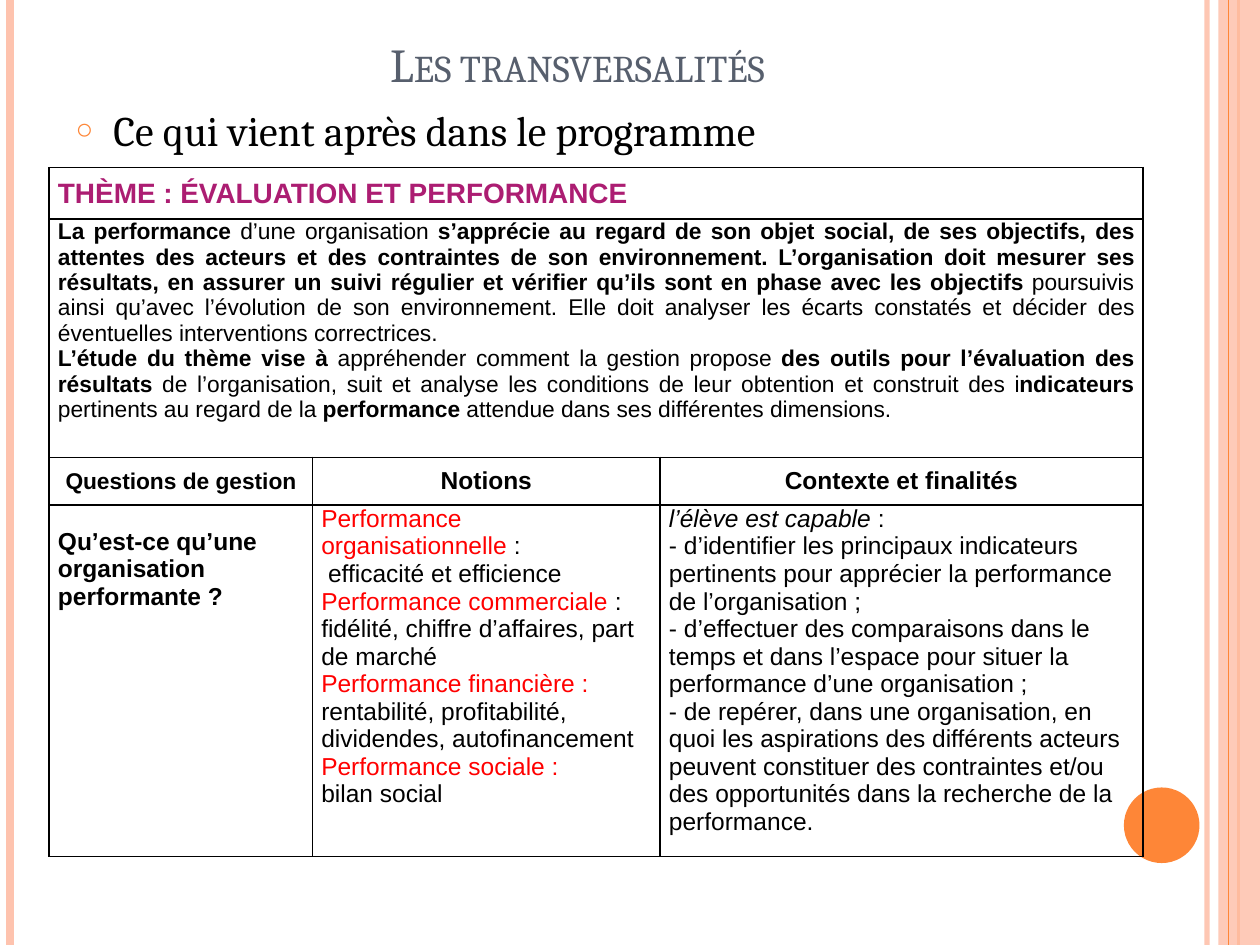
import pptx
import pptx.dml.color
import pptx.enum.shapes
import pptx.enum.text
import pptx.oxml.ns
import pptx.oxml.xmlchemy
import pptx.util
from lxml import etree

Inches = pptx.util.Inches
Pt = pptx.util.Pt
qn = pptx.oxml.ns.qn
ALIGN = pptx.enum.text.PP_ALIGN
ANCHOR = pptx.enum.text.MSO_ANCHOR
SHAPES = pptx.enum.shapes.MSO_SHAPE

COLORS = {
    "orange": "FE8637", "peach": "FEC3AE", "slate": "575F6D",
    "black": "000000", "red": "FF0000", "magenta": "AC1D72",
}

THEME = [[("THÈME : ÉVALUATION ET PERFORMANCE", "bold")]]
SUMMARY = [
    [("La performance", "bold"), (" d’une organisation ", ""),
     ("s’apprécie au regard de son objet social, de ses objectifs, des attentes des acteurs et des "
      "contraintes de son environnement. L’organisation doit mesurer ses résultats, en assurer un suivi "
      "régulier et vérifier qu’ils sont en phase avec les objectifs", "bold"),
     (" poursuivis ainsi qu’avec l’évolution de son environnement. Elle doit analyser les écarts constatés "
      "et décider des éventuelles interventions correctrices.", "")],
    [("L’étude du thème vise à", "bold"), (" appréhender comment la gestion propose ", ""),
     ("des outils pour l’évaluation des résultats", "bold"),
     (" de l’organisation, suit et analyse les conditions de leur obtention et construit des i", ""),
     ("ndicateurs", "bold"), (" pertinents au regard de la ", ""), ("performance", "bold"),
     (" attendue dans ses différentes dimensions. ", "")],
]
HEADINGS = [("Questions de gestion", 13), ("Notions", 14), ("Contexte et finalités", 14)]
QUESTION = [[("Qu’est-ce qu’une organisation performante ?", "bold")]]
NOTIONS = [
    [("Performance organisationnelle ", "red"), (":", "")],
    [(" efficacité et efficience", "")],
    [("Performance commerciale", "red"), (" : fidélité, chiffre d’affaires, part de marché", "")],
    [("Performance financière :", "red"), (" rentabilité, profitabilité, dividendes, autofinancement", "")],
    [("Performance sociale :", "red")],
    [("bilan social", "")],
]
PURPOSES = [
    [("l’élève est capable", "italic"), (" :", "")],
    [("- d’identifier les principaux indicateurs pertinents pour apprécier la performance de "
      "l’organisation ;", "")],
    [("- d’effectuer des comparaisons dans le temps et dans l’espace pour situer la performance d’une "
      "organisation ;", "")],
    [("- de repérer, dans une organisation, en quoi les aspirations des différents acteurs peuvent "
      "constituer des contraintes et/ou des opportunités dans la recherche de la performance.", "")],
]


def rgb(name):
    """Return the named colour."""
    return pptx.dml.color.RGBColor.from_string(COLORS[name])


def set_opacity(shape, percent):
    """Make the solid colour of a shape or line partly transparent."""
    color = next(shape._element.spPr.iter(qn("a:srgbClr")))
    etree.SubElement(color, qn("a:alpha")).set("val", str(percent * 1000))


def format_run(run, font, size, color):
    """Set the font, size and colour of a run."""
    run.font.name = font
    run.font.size = Pt(size)
    run.font.color.rgb = rgb(color)


def place(shape, left, top, width, height):
    """Move a shape into a box given in inches."""
    shape.left, shape.top = Inches(left), Inches(top)
    shape.width, shape.height = Inches(width), Inches(height)


def add_rule(slide, x, height, color, weight, opacity=100):
    """Draw a vertical rule from the top edge."""
    rule = slide.shapes.add_connector(
        pptx.enum.shapes.MSO_CONNECTOR.STRAIGHT, Inches(x), 0, Inches(x), Inches(height))
    rule.line.color.rgb = rgb(color)
    rule.line.width = Pt(weight)
    etree.SubElement(rule._element.spPr, qn("a:effectLst"))
    if opacity < 100:
        set_opacity(rule, opacity)


def add_solid(slide, kind, box, color):
    """Add a filled shape without outline."""
    shape = slide.shapes.add_shape(kind, *(Inches(value) for value in box))
    shape.shadow.inherit = False
    shape.fill.solid()
    shape.fill.fore_color.rgb = rgb(color)
    shape.line.fill.background()
    return shape


def add_decoration(slide, width, height):
    """Draw the edge rules, the side band and the disc."""
    add_rule(slide, width - 0.42, height, "peach", 3, 93)
    add_rule(slide, 0.08, height, "peach", 4.5)
    add_rule(slide, width - 0.17, height, "orange", 1.5)
    band = add_solid(slide, SHAPES.RECTANGLE, (width - 0.33, 0, 0.33, height), "peach")
    set_opacity(band, 87)
    add_rule(slide, width - 0.25, height, "orange", 0.75)
    add_solid(slide, SHAPES.OVAL, (width - 1.08, height - 1.25, 0.6, 0.6), "orange")


def fill_title(slide, left, top, width, height):
    """Write the centred title in small capitals."""
    title = slide.shapes.title
    place(title, left, top, width, height)
    title.text_frame.text = "Les transversalités"
    title.text_frame.vertical_anchor = ANCHOR.BOTTOM
    paragraph = title.text_frame.paragraphs[0]
    paragraph.alignment = ALIGN.CENTER
    run = paragraph.runs[0]
    format_run(run, "Cambria", 27, "slate")
    run.font._element.set("cap", "small")


def fill_body(slide, left, top, width, height):
    """Write the bulleted line under the title."""
    body = slide.placeholders[1]
    place(body, left, top, width, height)
    body.text_frame.text = "Ce qui vient après dans le programme"
    paragraph = body.text_frame.paragraphs[0]
    paragraph.space_before = Pt(6)
    format_run(paragraph.runs[0], "Cambria", 24, "black")
    properties = paragraph._p.get_or_add_pPr()
    properties.set("marL", str(Inches(0.3)))
    properties.set("indent", str(Inches(-0.3)))
    bullet_color = etree.SubElement(properties, qn("a:buClr"))
    etree.SubElement(bullet_color, qn("a:srgbClr")).set("val", COLORS["orange"])
    etree.SubElement(properties, qn("a:buSzPct")).set("val", "70000")
    etree.SubElement(properties, qn("a:buChar")).set("char", "○")


def style_cell(cell):
    """Clear the fill, set the margins and draw black borders."""
    cell.margin_left = cell.margin_right = Inches(0.07)
    cell.margin_top = cell.margin_bottom = 0
    properties = cell._tc.get_or_add_tcPr()
    for side in ("lnL", "lnR", "lnT", "lnB"):
        border = etree.SubElement(properties, qn("a:" + side), w=str(Pt(1)))
        fill = etree.SubElement(border, qn("a:solidFill"))
        etree.SubElement(fill, qn("a:srgbClr")).set("val", COLORS["black"])
    cell.fill.background()


def write_cell(cell, paragraphs, size, alignment=ALIGN.LEFT, anchor=ANCHOR.TOP, color="black"):
    """Fill a cell with paragraphs made of (text, style) runs."""
    cell.vertical_anchor = anchor
    frame = cell.text_frame
    for index, parts in enumerate(paragraphs):
        paragraph = frame.add_paragraph() if index else frame.paragraphs[0]
        paragraph.alignment = alignment
        for text, style in parts:
            run = paragraph.add_run()
            run.text = text
            format_run(run, "Arial", size, "red" if style == "red" else color)
            run.font.bold = style == "bold"
            run.font.italic = style == "italic"


def add_programme_table(slide, left, top, widths, heights):
    """Add the table of the theme with its questions, notions and purposes."""
    frame = slide.shapes.add_table(
        len(heights), len(widths), Inches(left), Inches(top), Inches(sum(widths)), Inches(sum(heights)))
    table = frame.table
    table.first_row = table.horz_banding = False
    for column, width in zip(table.columns, widths):
        column.width = Inches(width)
    for row, height in zip(table.rows, heights):
        row.height = Inches(height)
    for cell in table.iter_cells():
        style_cell(cell)
    for row in (0, 1):
        table.cell(row, 0).merge(table.cell(row, 2))
    write_cell(table.cell(0, 0), THEME, 16, anchor=ANCHOR.MIDDLE, color="magenta")
    write_cell(table.cell(1, 0), SUMMARY, 13, ALIGN.JUSTIFY)
    for column, (heading, size) in enumerate(HEADINGS):
        write_cell(table.cell(2, column), [[(heading, "bold")]], size, ALIGN.CENTER, ANCHOR.MIDDLE)
    for column, paragraphs in enumerate((QUESTION, NOTIONS, PURPOSES)):
        write_cell(table.cell(3, column), paragraphs, 14)
    table.cell(3, 0).margin_top = Inches(0.18)


def main():
    """Build and save the slide."""
    presentation = pptx.Presentation()
    presentation.slide_width, presentation.slide_height = Inches(10), Inches(7.5)
    slide = presentation.slides.add_slide(presentation.slide_layouts[1])
    add_decoration(slide, 10, 7.5)
    fill_title(slide, 0.5, 0.23, 8.17, 0.55)
    fill_body(slide, 0.5, 0.78, 8.17, 0.47)
    add_programme_table(slide, 0.39, 1.33, (2.09, 2.76, 3.83), (0.41, 1.89, 0.38, 2.79))
    presentation.save("out.pptx")


if __name__ == "__main__":
    main()
